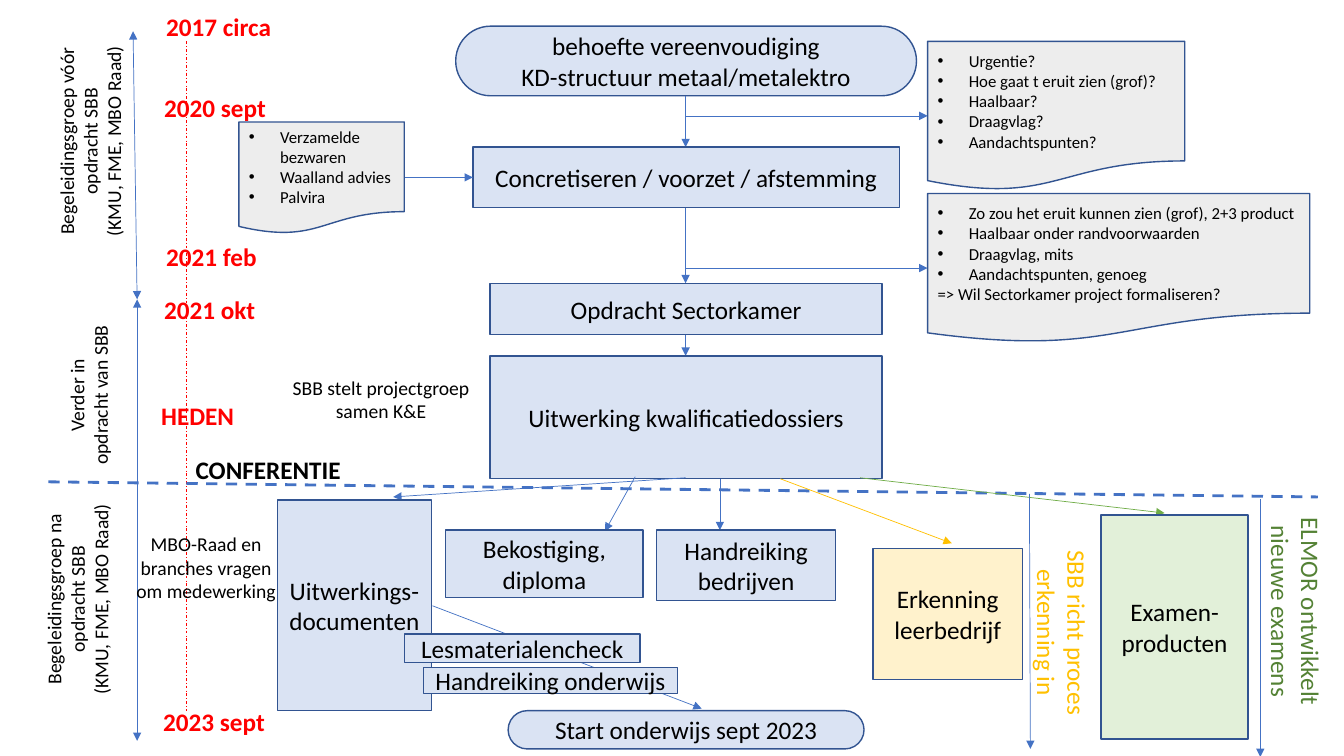
from lxml import etree
from pptx import Presentation
from pptx import util as u
from pptx.dml.color import RGBColor
from pptx.enum import dml, shapes, text
from pptx.oxml.ns import qn

PX = 9144  # EMU per px, 100 px to the inch
COLORS = {
    "black": "000000", "red": "FF0000", "outline": "325491", "arrow": "4472C4",
    "blue": "DAE3F3", "grey": "EDEDED", "yellow": "FFF2CC", "green": "E2F0D9",
    "gold": "FFC000", "leaf": "70AD47", "forest": "548235",
}
RECT = shapes.MSO_SHAPE.RECTANGLE
PILL = shapes.MSO_SHAPE.ROUNDED_RECTANGLE
NOTE = shapes.MSO_SHAPE.FLOWCHART_DOCUMENT
MIDDLE = text.MSO_ANCHOR.MIDDLE
TOP = text.MSO_ANCHOR.TOP


def rgb(name):
    return RGBColor.from_string(COLORS[name])


def emu(*lengths):
    return [int(n * PX) for n in lengths]


def write(sp, content, size=18, color="black", bold=False, center=True,
          anchor=MIDDLE, bullet="•"):
    """Each line of content is a paragraph; a leading bullet sign makes a list item."""
    tf = sp.text_frame
    tf.word_wrap = True
    tf.vertical_anchor = anchor
    for i, line in enumerate(content.split("\n")):
        p = tf.paragraphs[0] if i == 0 else tf.add_paragraph()
        p.alignment = text.PP_ALIGN.CENTER if center else text.PP_ALIGN.LEFT
        if line.startswith(bullet):
            pPr = p._p.get_or_add_pPr()
            indent = emu(31)[0]
            pPr.set("marL", str(indent))
            pPr.set("indent", str(-indent))
            etree.SubElement(pPr, qn("a:buFont")).set("typeface", "Arial")
            etree.SubElement(pPr, qn("a:buChar")).set("char", bullet)
        r = p.add_run()
        r.text = line.removeprefix(bullet)
        r.font.name = "Calibri"
        r.font.size = u.Pt(size)
        r.font.bold = bold
        r.font.color.rgb = rgb(color)


def add_box(s, box, content, kind=RECT, fill="blue", **fmt):
    sp = s.shapes.add_shape(kind, *emu(*box))
    sp.shadow.inherit = False
    if kind == PILL:
        sp.adjustments[0] = 0.5
    sp.fill.solid()
    sp.fill.fore_color.rgb = rgb(fill)
    sp.line.color.rgb = rgb("outline")
    sp.line.width = u.Pt(1)
    write(sp, content, **fmt)


def add_label(s, box, content, rotation=0, **fmt):
    sp = s.shapes.add_textbox(*emu(*box))
    sp.rotation = rotation
    write(sp, content, **fmt)


def add_line(s, x1, y1, x2, y2, color="arrow", width=0.5, dash=None,
             ends=("tailEnd",), kind=shapes.MSO_CONNECTOR.STRAIGHT):
    cxn = s.shapes.add_connector(kind, *emu(x1, y1, x2, y2))
    cxn.line.color.rgb = rgb(color)
    cxn.line.width = u.Pt(width)
    if dash:
        cxn.line.dash_style = dash
    ln = cxn.line._get_or_add_ln()
    for end in ends:
        etree.SubElement(ln, qn(f"a:{end}")).set("type", "triangle")
    etree.SubElement(cxn._element.spPr, qn("a:effectLst"))
    return cxn


def add_elbow(s, x1, y1, x2, y2):
    """Arrow that goes down first and then right: a turned and flipped one-bend connector."""
    cx, cy, half_w, half_h = (x1 + x2) / 2, (y1 + y2) / 2, (x2 - x1) / 2, (y2 - y1) / 2
    cxn = add_line(s, cx - half_h, cy - half_w, cx + half_h, cy + half_w,
                   kind=shapes.MSO_CONNECTOR.ELBOW)
    spPr = cxn._element.spPr
    spPr.find(qn("a:prstGeom")).set("prst", "bentConnector2")
    xfrm = spPr.find(qn("a:xfrm"))
    xfrm.set("rot", str(270 * 60000))
    xfrm.set("flipH", "1")


def timeline(s, x, y, w, h):
    # Phase arrows and the date line
    both = ("headEnd", "tailEnd")
    add_line(s, x + 136, y + 297, x + 132, y + 31, ends=both)
    add_line(s, x + 136, y + 735, x + 136, y + 297, ends=both)
    add_line(s, x + 185, y + 41, x + 185, y + 705, color="red", ends=(),
             dash=dml.MSO_LINE.DASH_DOT)

    # Phases
    for box, phase in (
        ((-38, 99, 254, 82), "Begeleidingsgroep vóór opdracht SBB\n(KMU, FME, MBO Raad)"),
        ((4, 351, 167, 82), "Verder in opdracht van SBB"),
        ((-45, 554, 243, 81), "Begeleidingsgroep na\nopdracht SBB\n(KMU, FME, MBO Raad)"),
    ):
        left, top, width, height = box
        add_label(s, (x + left, y + top, width, height), phase, rotation=270, size=14)

    # Dates
    for left, top, date in ((155, -8, "2017 circa"), (153, 73, "2020 sept"),
                            (155, 220, "2021 feb"), (153, 273, "2021 okt"),
                            (150, 378, "HEDEN"), (152, 682, "2023 sept")):
        add_label(s, (x + left, y + top, 177, 68), date,
                  color="red", bold=True, center=False)

    # Conference
    add_line(s, x + 48, y + 478, x + 1307, y + 493, width=2, ends=(),
             dash=dml.MSO_LINE.DASH)
    add_label(s, (x + 172, y + 446, 188, 40), "CONFERENTIE", bold=True, anchor=TOP)


def preparation(s, x, y, w, h):
    axis = x + 443

    # Steps down the axis, each joined to the one before
    bottom = None
    for top, width, height, kind, step in (
        (0, 457, 69, PILL, "behoefte vereenvoudiging\nKD-structuur metaal/metalektro"),
        (120, 423, 60, RECT, "Concretiseren / voorzet / afstemming"),
        (255, 389, 51, RECT, "Opdracht Sectorkamer"),
        (327, 389, 122, RECT, "Uitwerking kwalificatiedossiers"),
    ):
        if bottom is not None:
            add_line(s, axis, y + bottom, axis, y + top)
        add_box(s, (axis - width // 2, y + top, width, height), step, kind)
        bottom = top + height

    # Notes beside the steps
    add_elbow(s, axis, y + 69, axis + 240, y + 89)
    add_elbow(s, axis, y + 180, axis + 240, y + 240)
    add_line(s, x + 164, y + 150, x + 232, y + 150)
    for left, top, width, height, note in (
        (0, 95, 164, 111, "•Verzamelde bezwaren\n•Waalland advies\n•Palvira"),
        (683, 15, 255, 148, "•Urgentie?\n•Hoe gaat t eruit zien (grof)?\n•Haalbaar?\n"
                            "•Draagvlag?\n•Aandachtspunten?"),
        (683, 166, 379, 148, "•Zo zou het eruit kunnen zien (grof), 2+3 product\n"
                             "•Haalbaar onder randvoorwaarden\n•Draagvlag, mits\n"
                             "•Aandachtspunten, genoeg\n"
                             "=> Wil Sectorkamer project formaliseren?"),
    ):
        add_box(s, (x + left, y + top, width, height), note, NOTE,
                fill="grey", size=12, center=False)
    add_label(s, (x + 28, y + 336, 226, 68), "SBB stelt projectgroep samen K&E", size=14)


def deliverables(s, x, y, w, h):
    # Arrows
    for x1, y1, x2, y2, color in (
        (405, 1, 115, 20, "arrow"), (355, 0, 325, 54, "arrow"),
        (439, 2, 439, 53, "arrow"), (499, 2, 669, 66, "gold"),
        (578, 1, 880, 36, "leaf"), (154, 128, 421, 230, "arrow"),
        (746, 17, 747, 270, "arrow"), (950 + 25, 22, 950 + 25, 278, "arrow"),
    ):
        add_line(s, x + x1, y + y1, x + x2, y + y2, color=color)

    # Products
    for left, top, width, height, kind, fill, product in (
        (0, 23, 153, 209, RECT, "blue", "Uitwerkings-documenten"),
        (167, 53, 196, 67, RECT, "blue", "Bekostiging, diploma"),
        (376, 53, 178, 70, RECT, "blue", "Handreiking bedrijven"),
        (591, 71, 148, 130, RECT, "yellow", "Erkenning leerbedrijf"),
        (817, 38, 146, 222, RECT, "green", "Examen-producten"),
        (126, 156, 234, 28, RECT, "blue", "Lesmaterialencheck"),
        (145, 189, 252, 26, RECT, "blue", "Handreiking onderwijs"),
        (229, 232, 353, 38, PILL, "blue", "Start onderwijs sept 2023"),
    ):
        add_box(s, (x + left, y + top, width, height), product, kind, fill)

    # Who does what
    add_label(s, (x - 159, y + 50, 177, 81), "MBO-Raad en branches vragen om medewerking",
              size=14, anchor=TOP)
    add_label(s, (x + 647, y + 119, 262, 71), "SBB richt proces erkenning in",
              rotation=90, color="gold", anchor=TOP)
    add_label(s, (x + 879, y + 98, 262, 71), "ELMOR ontwikkelt nieuwe examens",
              rotation=90, color="forest", anchor=TOP)


def main():
    prs = Presentation()
    prs.slide_width, prs.slide_height = emu(1333, 750)
    s = prs.slides.add_slide(prs.slide_layouts[6])
    timeline(s, 0, 0, 1333, 750)
    preparation(s, 237, 26, 1062, 449)
    deliverables(s, 275, 473, 1058, 277)
    prs.save("out.pptx")


if __name__ == "__main__":
    main()
